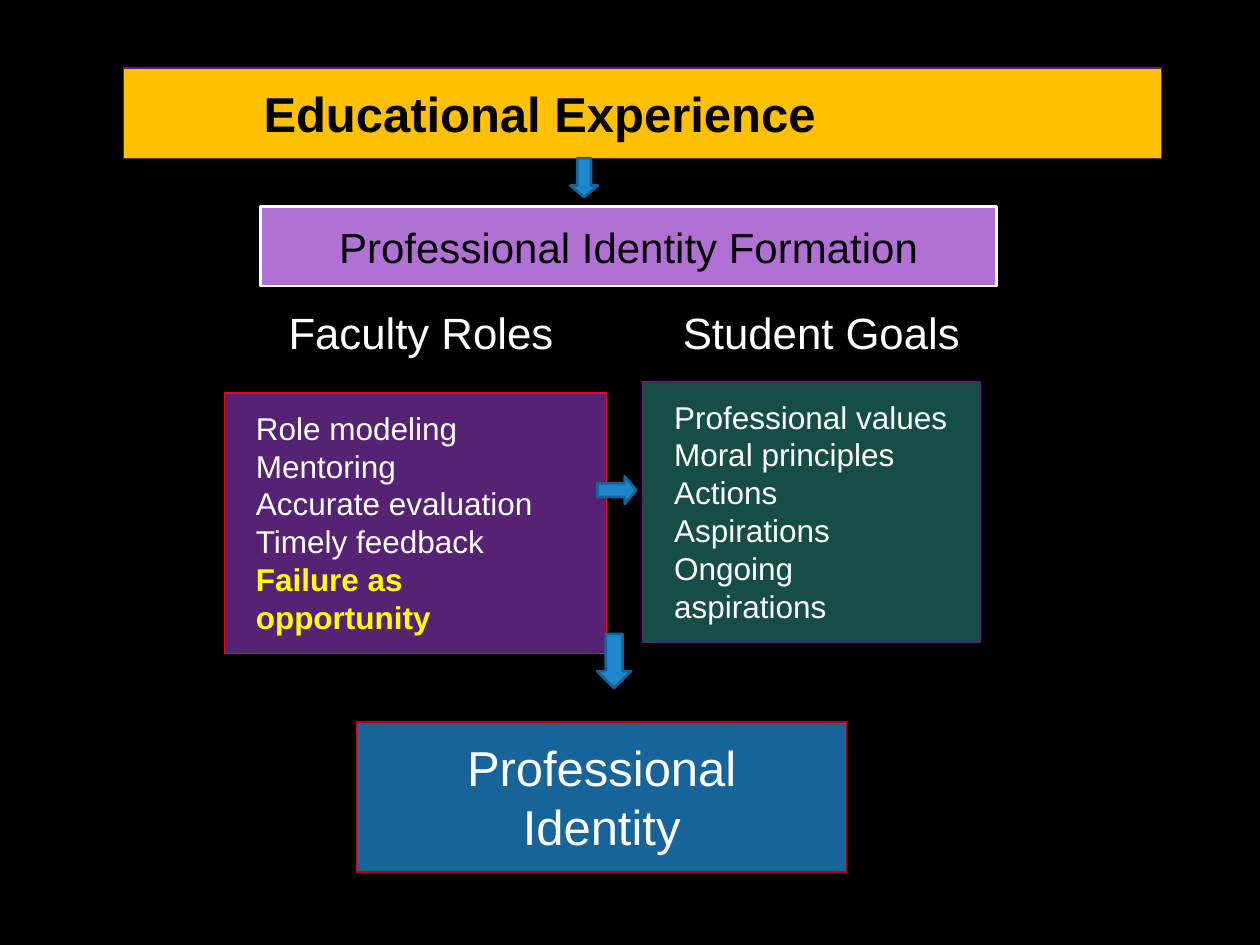
"""Build the slide that leads from educational experience to professional identity."""
from lxml.etree import SubElement
from pptx import Presentation
from pptx.dml.color import RGBColor
from pptx.enum.shapes import MSO_SHAPE
from pptx.enum.text import MSO_ANCHOR, MSO_AUTO_SIZE, PP_ALIGN
from pptx.oxml.ns import qn
from pptx.util import Pt

COLORS = {
    "black": "000000", "white": "FFFFFF", "gold": "FFC000", "lilac": "B070D4",
    "purple": "562374", "green": "164E45", "blue": "16649A", "crimson": "C00000",
    "red": "FF0000", "yellow": "FFFF00", "arrow": "1D86CD", "arrow edge": "156398",
}
TITLE = ("Professional Identity Formation", (149, 118, 420.5, 45.4))
LISTS = [
    (["Role modeling", "Mentoring", "Accurate evaluation", "Timely feedback",
      "Failure as opportunity"], (128.2, 224.6, 218.2, 149), "purple", "red"),
    (["Professional values", "Moral principles", "Actions", "Aspirations",
      "Ongoing aspirations"], (367.2, 218.2, 193, 149), "green", "purple"),
]
HIGHLIGHT = "Failure as opportunity"
BANNER = ("Educational Experience", (70.6, 38.9, 593.3, 51.8))
RESULT = ("Professional Identity", (203.8, 412.6, 280, 85.7))
HEADINGS = [("Faculty Roles", (146.9, 165.6, 189.4, 48.2)),
            ("Student Goals", (372.2, 165.6, 196.6, 48.2))]
ARROWS = [
    (MSO_SHAPE.RIGHT_ARROW, (322.6, 93.6, 22.3, 15.8), 90, 0.42),
    (MSO_SHAPE.RIGHT_ARROW, (341.3, 272.2, 22.3, 15.8), 0, 0.42),
    (MSO_SHAPE.DOWN_ARROW, (341.3, 362.2, 19.4, 31), 0, 0.5),
]


def color(name):
    return RGBColor.from_string(COLORS[name])


def place(shape, frame):
    shape.left, shape.top, shape.width, shape.height = map(Pt, frame)


def paint(shape, fill, line, width=0.75):
    shape.fill.solid()
    shape.fill.fore_color.rgb = color(fill)
    shape.line.color.rgb = color(line)
    shape.line.width = Pt(width)


def add_box(page, kind, frame):
    box = page.shapes.add_shape(kind, *map(Pt, frame))
    box.shadow.inherit = False
    return box


def set_padding(text_frame, left=18):
    text_frame.auto_size = MSO_AUTO_SIZE.NONE
    text_frame.vertical_anchor = MSO_ANCHOR.TOP
    text_frame.margin_left, text_frame.margin_right = Pt(left), Pt(18)
    text_frame.margin_top = text_frame.margin_bottom = Pt(9)


def set_font(para, size, name, bold=False):
    para.font.name = "Arial"
    para.font.size = Pt(size)
    para.font.bold = bold
    para.font.color.rgb = color(name)


def fill_title(title):
    text, frame = TITLE
    place(title, frame)
    paint(title, "lilac", "white", 1.5)
    title.text_frame.text = text
    title.text_frame.auto_size = MSO_AUTO_SIZE.NONE
    title.text_frame.vertical_anchor = MSO_ANCHOR.MIDDLE
    para = title.text_frame.paragraphs[0]
    para.alignment = PP_ALIGN.CENTER
    set_font(para, 24, "black")


def fill_list(body, items, frame, fill, line):
    place(body, frame)
    paint(body, fill, line)
    body.text_frame.text = "\n".join(items)
    set_padding(body.text_frame)
    for para in body.text_frame.paragraphs:
        properties = para._p.get_or_add_pPr()
        properties.set("marL", "0")
        properties.set("indent", "0")
        SubElement(properties, qn("a:buNone"))
        para.space_before = Pt(0)
        special = para.text == HIGHLIGHT
        set_font(para, 18, "yellow" if special else "white", special)


def add_label(page, content, fill, line, text_color, align, left=18, bold=False):
    text, frame = content
    box = add_box(page, MSO_SHAPE.RECTANGLE, frame)
    paint(box, fill, line)
    box.text_frame.word_wrap = True
    box.text_frame.text = text
    set_padding(box.text_frame, left)
    para = box.text_frame.paragraphs[0]
    para.alignment = align
    set_font(para, 28, text_color, bold)


def add_heading(page, text, frame):
    box = page.shapes.add_textbox(*map(Pt, frame))
    box.text_frame.text = text
    set_padding(box.text_frame)
    box.text_frame.word_wrap = False
    set_font(box.text_frame.paragraphs[0], 25, "white")


def add_arrow(page, kind, frame, rotation, head):
    arrow = add_box(page, kind, frame)
    arrow.rotation = rotation
    arrow.adjustments[1] = head
    paint(arrow, "arrow", "arrow edge", 1.5)


def main():
    deck = Presentation()
    deck.slide_width, deck.slide_height = Pt(720), Pt(540)
    page = deck.slides.add_slide(deck.slide_layouts[3])
    page.background.fill.solid()
    page.background.fill.fore_color.rgb = color("black")

    title, *bodies = page.placeholders
    fill_title(title)
    for body, content in zip(bodies, LISTS):
        fill_list(body, *content)
    add_label(page, BANNER, "gold", "purple", "black", PP_ALIGN.LEFT, left=80, bold=True)
    add_label(page, RESULT, "blue", "crimson", "white", PP_ALIGN.CENTER)
    for heading in HEADINGS:
        add_heading(page, *heading)
    for arrow in ARROWS:
        add_arrow(page, *arrow)
    deck.save("out.pptx")


if __name__ == "__main__":
    main()
